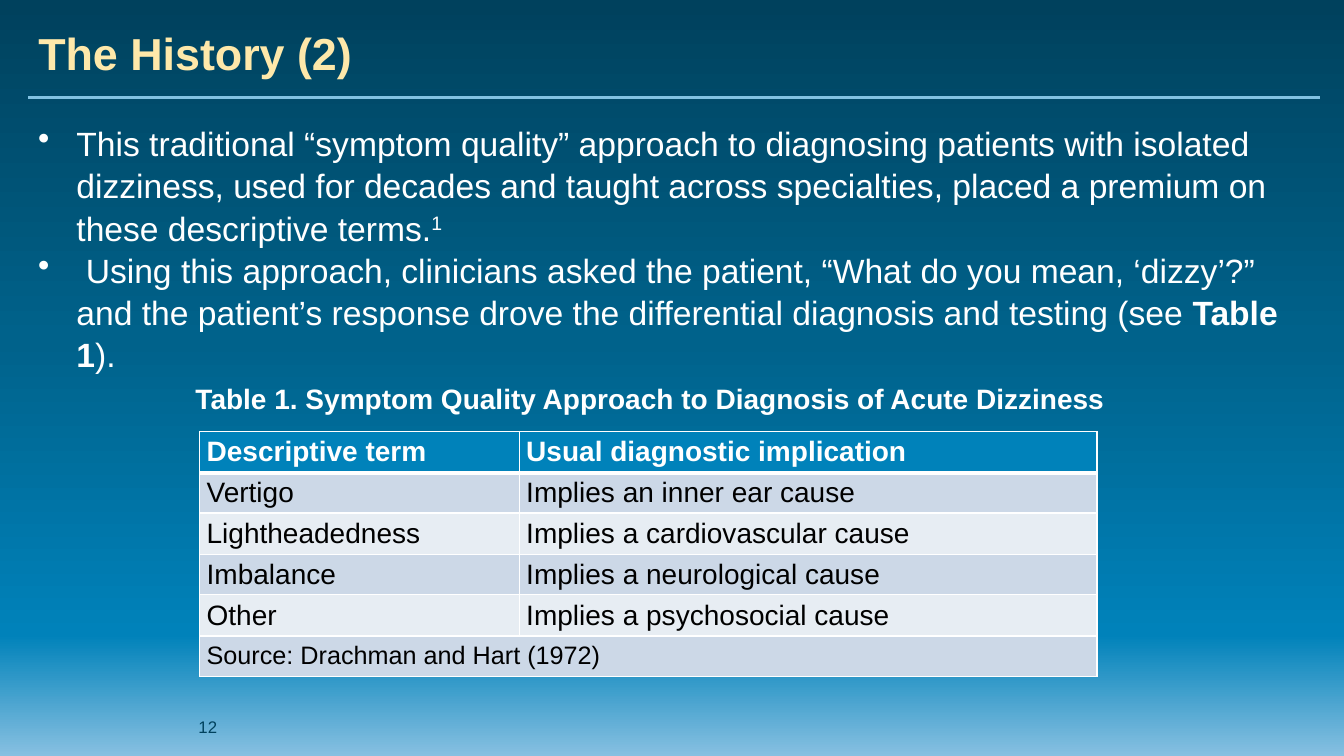
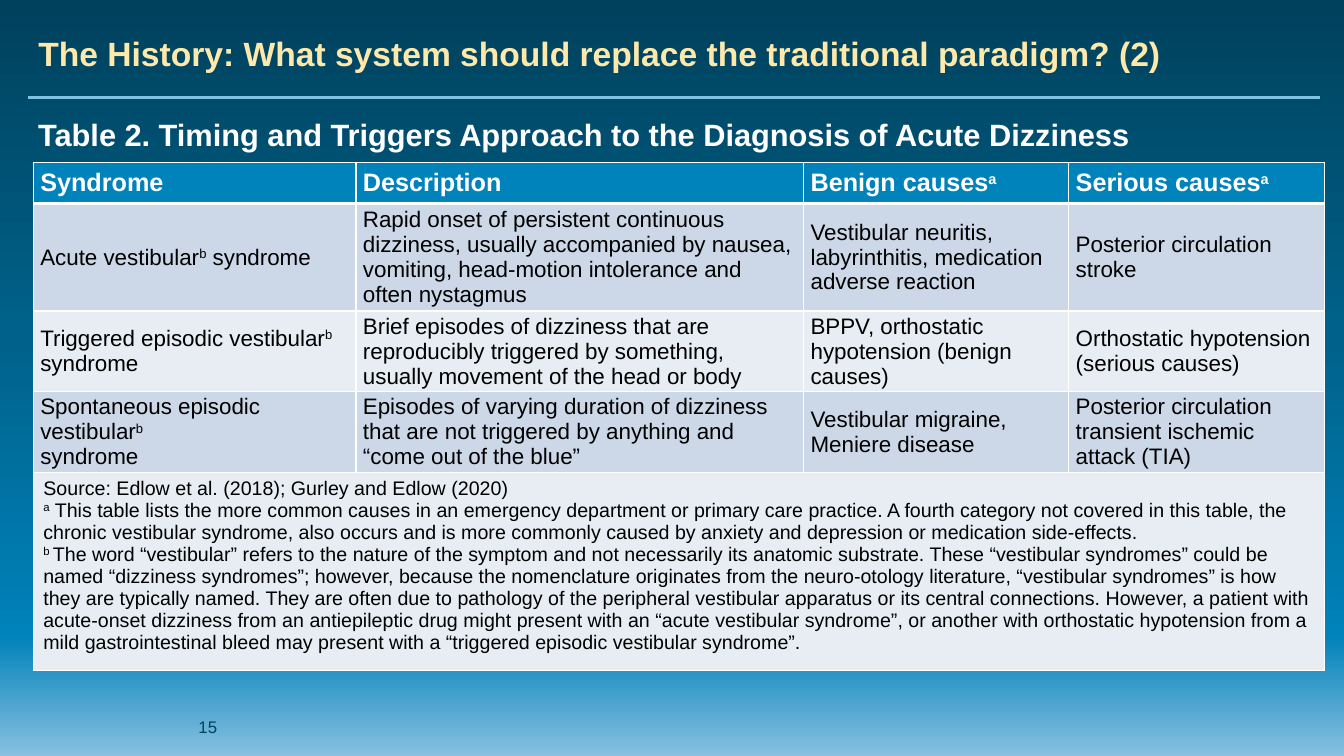
from dataclasses import dataclass

from lxml.etree import SubElement
from pptx import Presentation
from pptx.dml.color import RGBColor
from pptx.enum.shapes import MSO_CONNECTOR
from pptx.enum.text import MSO_ANCHOR, MSO_AUTO_SIZE, PP_ALIGN
from pptx.oxml.ns import qn
from pptx.util import Inches, Pt


@dataclass(frozen=True)
class Theme:
    font: str = "Arial"
    title: str = "FEE8AA"
    rule: str = "81C2E3"
    light: str = "FFFFFF"
    dark: str = "000000"
    number: str = "00415D"
    header: str = "0082BA"
    bands: tuple = ("CCD8E7", "E7EDF3")
    gradient: tuple = ((0, "00415D"), (45, "00628B"), (84, "0082BA"), (100, "87C0E1"))
    body_size: int = 24
    number_size: int = 12
    thin: int = 1
    thick: int = 3


THEME = Theme()

# In all wording, *...* is bold, ^...^ is superscript, and a line break starts a paragraph.
SLIDES = [
    {
        "title": "The History (2)",
        "title_size": 32,
        "number": "12",
        "bullets": (
            "This traditional “symptom quality” approach to diagnosing patients with isolated "
            "dizziness, used for decades and taught across specialties, placed a premium on "
            "these descriptive terms.^1^\n"
            " Using this approach, clinicians asked the patient, “What do you mean, ‘dizzy’?” "
            "and the patient’s response drove the differential diagnosis and testing "
            "(see *Table 1*)."
        ),
        "caption": "Table 1. Symptom Quality Approach to Diagnosis of Acute Dizziness",
        "caption_at": (1.84, 3.74, 9.61, 0.44),
        "caption_size": 20,
        "caption_spacing": 1.0,
        "table": {
            "left_top": (1.98, 4.28),
            "columns": (3.17, 5.73),
            "heights": (0.41, 0.4, 0.41, 0.4, 0.41, 0.4),
            "sizes": {"header": 20, "body": 20, "source": 18},
            "source_insets": (0.07, 0),
            "source_anchor": MSO_ANCHOR.MIDDLE,
            "rows": [
                ("Descriptive term", "Usual diagnostic implication"),
                ("Vertigo", "Implies an inner ear cause"),
                ("Lightheadedness", "Implies a cardiovascular cause"),
                ("Imbalance", "Implies a neurological cause"),
                ("Other", "Implies a psychosocial cause"),
            ],
            "source": ("Source: Drachman and Hart (1972)",),
        },
    },
    {
        "title": "The History: What system should replace the traditional paradigm? (2)",
        "title_size": 24,
        "number": "15",
        "caption": "Table 2. Timing and Triggers Approach to the Diagnosis of Acute Dizziness",
        "caption_at": (0.28, 1.07, 12.72, 0.5),
        "caption_size": 22,
        "caption_spacing": 1.07,
        "table": {
            "left_top": (0.33, 1.61),
            "columns": (3.2, 4.44, 2.63, 2.54),
            "heights": (0.41, 0.98, 0.74, 0.74, 1.85),
            "sizes": {"header": 18, "body": 16, "source": 14},
            "source_insets": (0.1, 0.05),
            "source_anchor": MSO_ANCHOR.TOP,
            "rows": [
                ("Syndrome", "Description", "Benign causes^a^", "Serious causes^a^"),
                (
                    "Acute vestibular^b^ syndrome",
                    "Rapid onset of persistent continuous dizziness, usually accompanied by "
                    "nausea, vomiting, head-motion intolerance and often nystagmus",
                    "Vestibular neuritis, labyrinthitis, medication adverse reaction",
                    "Posterior circulation stroke",
                ),
                (
                    "Triggered episodic vestibular^b^\nsyndrome",
                    "Brief episodes of dizziness that are reproducibly triggered by something, "
                    "usually movement of the head or body",
                    "BPPV, orthostatic hypotension (benign causes)",
                    "Orthostatic hypotension (serious causes)",
                ),
                (
                    "Spontaneous episodic vestibular^b^\nsyndrome",
                    "Episodes of varying duration of dizziness that are not triggered by "
                    "anything and “come out of the blue”",
                    "Vestibular migraine, Meniere disease",
                    "Posterior circulation transient ischemic attack (TIA)",
                ),
            ],
            "source": (
                "Source: Edlow et al. (2018); Gurley and Edlow (2020)",
                "^a^ This table lists the more common causes in an emergency department or "
                "primary care practice. A fourth category not covered in this table, the "
                "chronic vestibular syndrome, also occurs and is more commonly caused by "
                "anxiety and depression or medication side-effects.",
                "^b ^The word “vestibular” refers to the nature of the symptom and not "
                "necessarily its anatomic substrate. These “vestibular syndromes” could be "
                "named “dizziness syndromes”; however, because the nomenclature originates "
                "from the neuro-otology literature, “vestibular syndromes” is how they are "
                "typically named. They are often due to pathology of the peripheral vestibular "
                "apparatus or its central connections. However, a patient with acute-onset "
                "dizziness from an antiepileptic drug might present with an “acute vestibular "
                "syndrome”, or another with orthostatic hypotension from a mild "
                "gastrointestinal bleed may present with a “triggered episodic vestibular "
                "syndrome”.",
            ),
        },
    },
]


def rgb(code):
    return RGBColor.from_string(code)


def set_all(target, values):
    for name, value in values.items():
        setattr(target, name, value)


def write(frame, text, size, color, bold=False, spacing=1.0, bullet=False):
    """Fill a text frame, turning *bold* and ^superscript^ marks into runs."""
    for index, line in enumerate(text.split("\n")):
        para = frame.paragraphs[0] if index == 0 else frame.add_paragraph()
        set_all(para, {"alignment": PP_ALIGN.LEFT, "line_spacing": spacing})
        if bullet:
            props = para._p.get_or_add_pPr()
            props.set("marL", str(Inches(0.38)))
            props.set("indent", str(-Inches(0.38)))
            SubElement(props, qn("a:buChar"), char="•")
        for b, part in enumerate(line.split("*")):
            for s, piece in enumerate(part.split("^")):
                if not piece:
                    continue
                span = para.add_run()
                span.text = piece
                set_all(span.font, {"name": THEME.font, "size": Pt(size),
                                    "bold": bold or b % 2 == 1})
                span.font.color.rgb = rgb(color)
                if s % 2:
                    span.font._element.set("baseline", "30000")


def add_text(page, at, text, size, color, anchor=MSO_ANCHOR.TOP, **style):
    frame = page.shapes.add_textbox(*map(Inches, at)).text_frame
    set_all(frame, {"word_wrap": True, "vertical_anchor": anchor})
    write(frame, text, size, color, **style)


def set_background(master):
    fill = master.background.fill
    fill.gradient()
    fill.gradient_angle = 270
    stops = master.element.find(".//" + qn("p:bg")).find(".//" + qn("a:gsLst"))
    for stop in list(stops):
        stops.remove(stop)
    for position, color in THEME.gradient:
        stop = SubElement(stops, qn("a:gs"), pos=str(position * 1000))
        SubElement(stop, qn("a:srgbClr"), val=color)


def add_title(page, text, size):
    title = page.shapes.title
    place = (0.28, 0.12, 12.81, 0.81)
    set_all(title, dict(zip(("left", "top", "width", "height"), map(Inches, place))))
    set_all(title.text_frame, {"word_wrap": True, "auto_size": MSO_AUTO_SIZE.NONE,
                               "vertical_anchor": MSO_ANCHOR.MIDDLE})
    write(title.text_frame, text, size, THEME.title, bold=True)


def add_rule(page):
    ends = map(Inches, (0.28, 0.97, 13.09, 0.97))
    rule = page.shapes.add_connector(MSO_CONNECTOR.STRAIGHT, *ends)
    rule.line.color.rgb = rgb(THEME.rule)
    rule.line.width = Pt(2)
    SubElement(rule._element.spPr, qn("a:effectLst"))


def format_cell(cell, fill, insets, anchor, header):
    side, end = map(Inches, insets)
    set_all(cell, {"margin_left": side, "margin_right": side, "margin_top": end,
                   "margin_bottom": end, "vertical_anchor": anchor})
    props = cell._tc.get_or_add_tcPr()
    for edge in ("lnL", "lnR", "lnT", "lnB"):
        width = THEME.thick if header and edge == "lnB" else THEME.thin
        line = SubElement(props, qn("a:" + edge), w=str(Pt(width)))
        SubElement(SubElement(line, qn("a:solidFill")), qn("a:srgbClr"), val=THEME.light)
    cell.fill.solid()
    cell.fill.fore_color.rgb = rgb(fill)


def add_grid(page, data):
    """Add a table with a header row, banded rows and one merged source row."""
    columns, heights = data["columns"], data["heights"]
    place = (*data["left_top"], sum(columns), sum(heights))
    table = page.shapes.add_table(len(heights), len(columns), *map(Inches, place)).table
    for column, width in zip(table.columns, columns):
        column.width = Inches(width)
    for row, height in zip(table.rows, heights):
        row.height = Inches(height)

    last = len(heights) - 1
    table.cell(last, 0).merge(table.cell(last, len(columns) - 1))
    source_row = ("\n".join(data["source"]), *[""] * (len(columns) - 1))
    for r, texts in enumerate([*data["rows"], source_row]):
        kind = "header" if r == 0 else "source" if r == last else "body"
        header = kind == "header"
        fill = THEME.header if header else THEME.bands[(r - 1) % 2]
        insets = data["source_insets"] if kind == "source" else (0.07, 0)
        anchor = data["source_anchor"] if kind == "source" else MSO_ANCHOR.MIDDLE
        for c, text in enumerate(texts):
            cell = table.cell(r, c)
            format_cell(cell, fill, insets, anchor, header)
            write(cell.text_frame, text, data["sizes"][kind],
                  THEME.light if header else THEME.dark, bold=header)


def build_slide(deck, content):
    page = deck.slides.add_slide(deck.slide_layouts.get_by_name("Title Only"))
    add_rule(page)
    add_title(page, content["title"], content["title_size"])
    if "bullets" in content:
        add_text(page, (0.28, 1.15, 12.55, 2.5), content["bullets"], THEME.body_size,
                 THEME.light, spacing=1.05, bullet=True)
    add_text(page, (1.87, 7.01, 2.33, 0.4), content["number"], THEME.number_size,
             THEME.number, anchor=MSO_ANCHOR.MIDDLE)
    add_grid(page, content["table"])
    add_text(page, content["caption_at"], content["caption"], content["caption_size"],
             THEME.light, bold=True, spacing=content["caption_spacing"])


def main():
    deck = Presentation()
    set_all(deck, {"slide_width": Inches(13.33), "slide_height": Inches(7.5)})
    set_background(deck.slide_master)
    for content in SLIDES:
        build_slide(deck, content)
    deck.save("out.pptx")


if __name__ == "__main__":
    main()
